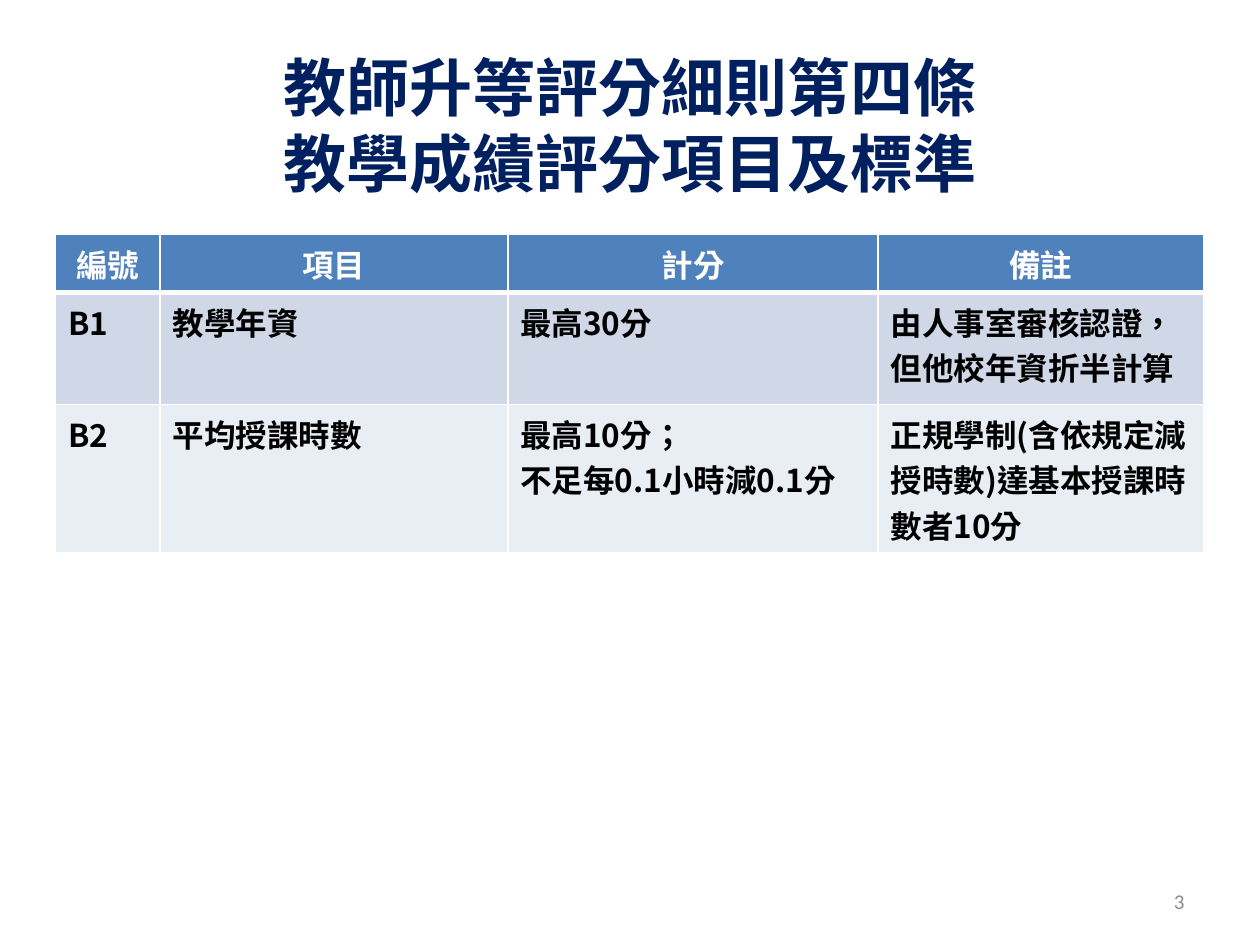
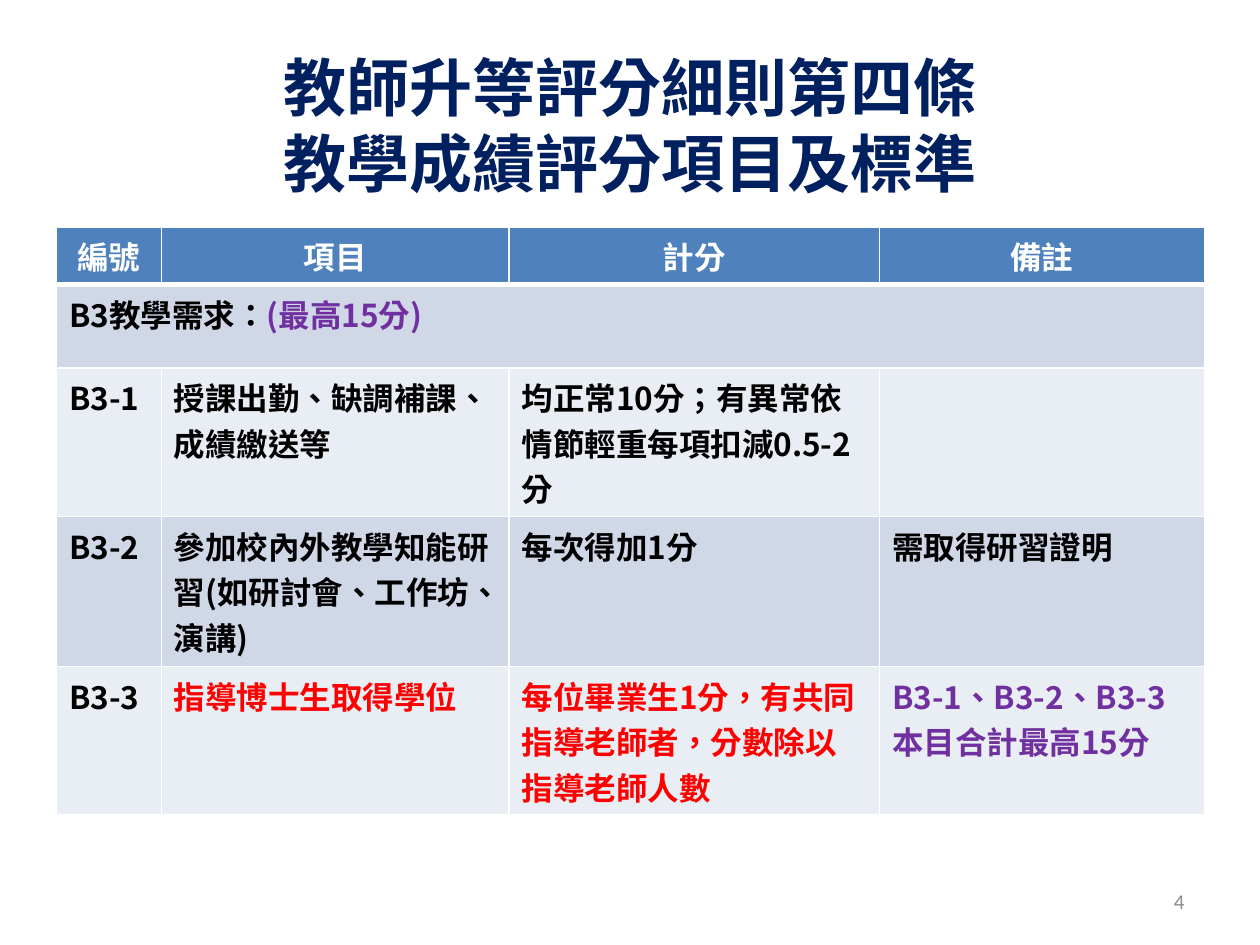
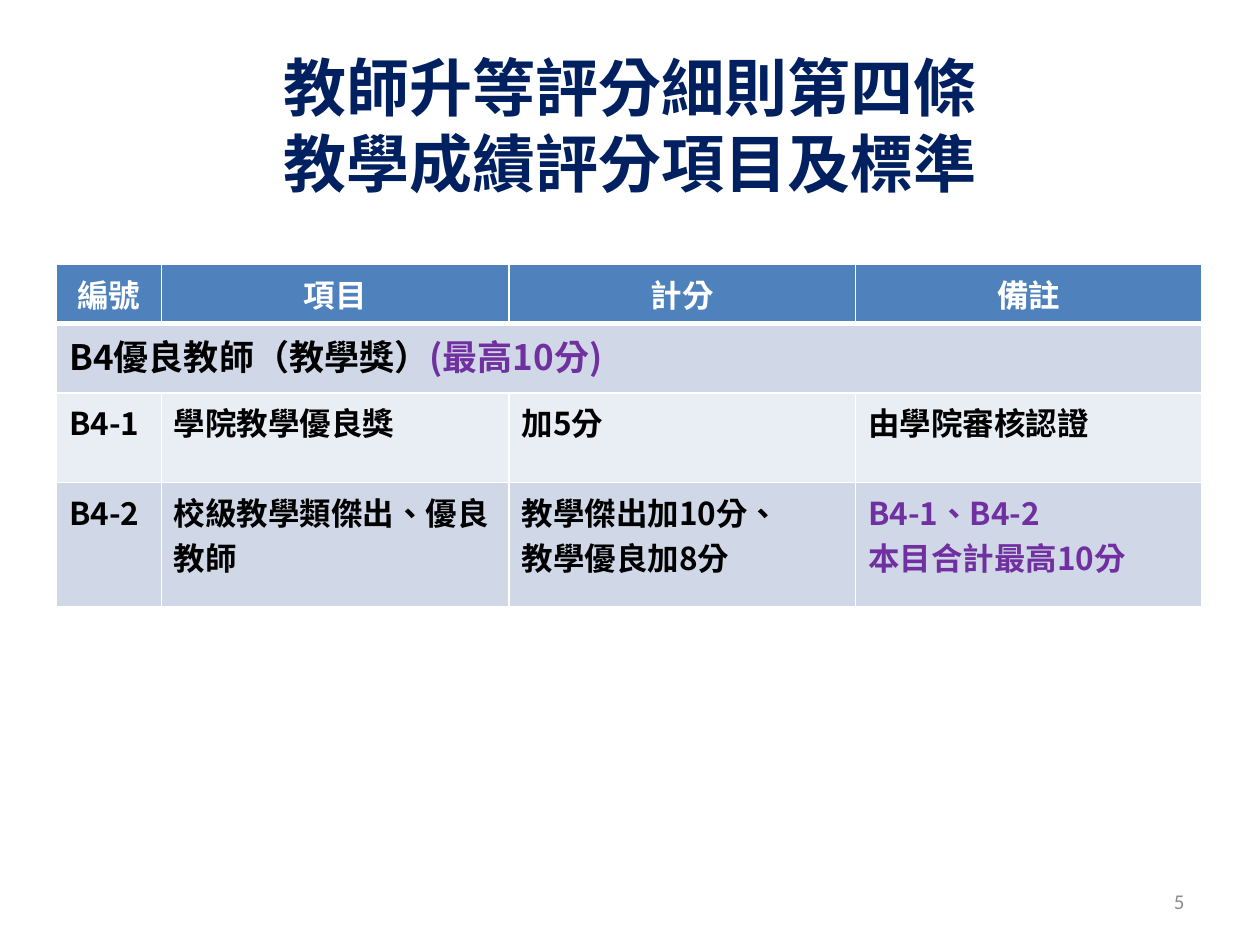
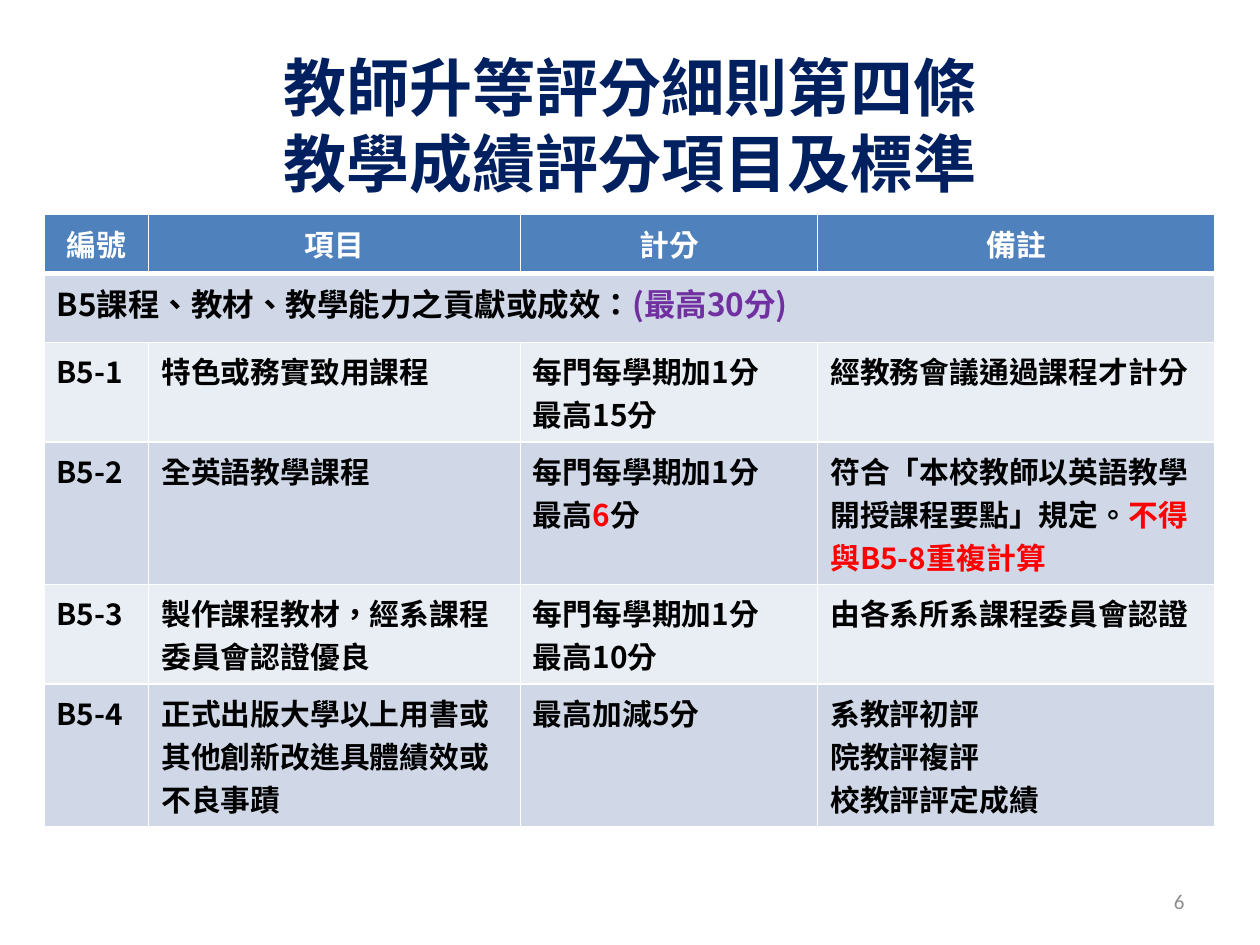
"""Build four slides of scoring tables for teacher promotion."""
import pptx
import pptx.dml.color
import pptx.enum.text
import pptx.oxml
import pptx.oxml.ns
import pptx.util

PX = 9144
RGB = pptx.dml.color.RGBColor
WHITE = RGB(0xFF, 0xFF, 0xFF)
BLACK = RGB(0x00, 0x00, 0x00)
NAVY = RGB(0x00, 0x20, 0x60)
BLUE = RGB(0x4F, 0x81, 0xBD)
DARK = RGB(0xD0, 0xD8, 0xE8)
LIGHT = RGB(0xE9, 0xED, 0xF4)
GREY = RGB(0x8C, 0x8C, 0x8C)
RED = RGB(0xFF, 0x00, 0x00)
PURPLE = RGB(0x70, 0x30, 0xA0)
FACE = "Noto Sans CJK SC"
TITLE = "教師升等評分細則第四條\v教學成績評分項目及標準"
HEAD = ["編號", "項目", "計分", "備註"]
FIRST = 3
ALIGN = pptx.enum.text.PP_ALIGN
MIDDLE = pptx.enum.text.MSO_ANCHOR.MIDDLE
qn = pptx.oxml.ns.qn


def style(run, size, color, latin, asian, bold=True):
    """Format one run, with a face for Latin and one for Chinese text."""
    font = run.font
    font.size = pptx.util.Pt(size)
    font.bold = bold
    font.name = latin
    font.color.rgb = color
    props = run._r.get_or_add_rPr()
    props.set("lang", "zh-TW")
    east = pptx.oxml.parse_xml(f'<a:ea {pptx.oxml.ns.nsdecls("a")} typeface="{asian}"/>')
    props.find(qn("a:latin")).addnext(east)


def edge(cell, top, base):
    """Draw white borders round a cell, given top and base widths in points."""
    props = cell._tc.get_or_add_tcPr()
    for spot, (side, width) in enumerate([("L", 1), ("R", 1), ("T", top), ("B", base)]):
        line = pptx.oxml.parse_xml(
            f'<a:ln{side} {pptx.oxml.ns.nsdecls("a")} w="{pptx.util.Pt(width)}">'
            f'<a:solidFill><a:srgbClr val="{WHITE}"/></a:solidFill></a:ln{side}>')
        props.insert(spot, line)


PAGES = [
    dict(left=44, top=186, size=18, band=18, cols=[83, 276, 294, 258], rows=[46, 89, 118], body=[
        ["B1", "教學年資", "最高30分", "由人事室審核認證，但他校年資折半計算"],
        ["B2", "平均授課時數", "最高10分；\n不足每0.1小時減0.1分",
         "正規學制(含依規定減授時數)達基本授課時數者10分"],
    ]),
    dict(left=45, top=180, size=18, band=18, cols=[83, 276, 294, 258],
         rows=[46, 66, 118, 119, 118], body=[
        [[("B3教學需求：", BLACK), ("(最高15分)", PURPLE)]],
        ["B3-1", "授課出勤、缺調補課、成績繳送等",
         "均正常10分；有異常依情節輕重每項扣減0.5-2分", ""],
        ["B3-2", "參加校內外教學知能研習(如研討會、工作坊、演講)", "每次得加1分", "需取得研習證明"],
        ["B3-3", [("指導博士生取得學位", RED)],
         [("每位畢業生1分，有共同指導老師者，分數除以指導老師人數", RED)],
         [("B3-1、B3-2、B3-3\n本目合計最高15分", PURPLE)]],
    ]),
    dict(left=45, top=210, size=18, band=20, cols=[83, 276, 275, 275],
         rows=[47, 55, 71, 99], body=[
        [[("B4優良教師（教學獎）", BLACK), ("(最高10分)", PURPLE)]],
        ["B4-1", "學院教學優良獎", "加5分", "由學院審核認證"],
        ["B4-2", "校級教學類傑出、優良教師", "教學傑出加10分、\n教學優良加8分",
         [("B4-1、B4-2\n本目合計最高10分", PURPLE)]],
    ]),
    dict(left=35, top=170, size=17, band=18, cols=[83, 295, 236, 315],
         rows=[47, 55, 79, 113, 79, 113], body=[
        [[("B5課程、教材、教學能力之貢獻或成效：", BLACK), ("(最高30分)", PURPLE)]],
        ["B5-1", "特色或務實致用課程", "每門每學期加1分\n最高15分", "經教務會議通過課程才計分"],
        ["B5-2", "全英語教學課程",
         [("每門每學期加1分\n最高", BLACK), ("6", RED), ("分", BLACK)],
         [("符合「本校教師以英語教學開授課程要點」規定。", BLACK), ("不得與B5-8重複計算", RED)]],
        ["B5-3", "製作課程教材，經系課程委員會認證優良", "每門每學期加1分\n最高10分",
         "由各系所系課程委員會認證"],
        ["B5-4", "正式出版大學以上用書或其他創新改進具體績效或不良事蹟", "最高加減5分",
         "系教評初評\n院教評複評\n校教評評定成績"],
    ]),
]

deck = pptx.Presentation()
deck.slide_width, deck.slide_height = 1000 * PX, 750 * PX
deck.element.set("firstSlideNum", str(FIRST))

for number, page in enumerate(PAGES, FIRST):
    slide = deck.slides.add_slide(deck.slide_layouts[5])

    title = slide.shapes.title
    title.left, title.top, title.width, title.height = 50 * PX, 36 * PX, 900 * PX, 125 * PX
    frame = title.text_frame
    frame.text = TITLE
    frame.auto_size = pptx.enum.text.MSO_AUTO_SIZE.NONE
    frame.vertical_anchor = MIDDLE
    frame.paragraphs[0].alignment = ALIGN.CENTER
    for run in frame.paragraphs[0].runs:
        style(run, 36, NAVY, "Times New Roman", "Calibri")

    frame = slide.shapes.add_textbox(717 * PX, 695 * PX, 233 * PX, 40 * PX).text_frame
    frame.word_wrap = True
    frame.vertical_anchor = MIDDLE
    frame.text = str(number)
    frame.paragraphs[0].alignment = ALIGN.RIGHT
    run = frame.paragraphs[0].runs[0]
    style(run, 12, GREY, "Calibri", "Calibri", False)
    field = run._r
    field.tag = qn("a:fld")
    field.set("id", "{B6F15528-21DE-4FAA-801E-634DDDAF4B2B}")
    field.set("type", "slidenum")

    cols, rows = page["cols"], page["rows"]
    table = slide.shapes.add_table(
        len(rows), len(cols), page["left"] * PX, page["top"] * PX,
        sum(cols) * PX, sum(rows) * PX).table
    for col, width in zip(table.columns, cols):
        col.width = width * PX
    for row, height in zip(table.rows, rows):
        row.height = height * PX

    for y, items in enumerate([HEAD] + page["body"]):
        for x in range(len(cols)):
            cell = table.cell(y, x)
            cell.fill.solid()
            cell.fill.fore_color.rgb = BLUE if y == 0 else DARK if y % 2 else LIGHT
            edge(cell, 3 if y == 1 else 1, 3 if y == 0 else 1)
        whole = len(items) == 1
        if whole:
            table.cell(y, 0).merge(table.cell(y, len(cols) - 1))
        size = page["band"] if whole else page["size"]
        for x, item in enumerate(items):
            cell = table.cell(y, x)
            if y == 0:
                cell.vertical_anchor = MIDDLE
            parts = [(item, BLACK if y else WHITE)] if isinstance(item, str) else item
            para = cell.text_frame.paragraphs[0]
            for text, color in parts:
                for turn, line in enumerate(text.split("\n")):
                    if turn:
                        para = cell.text_frame.add_paragraph()
                    if line:
                        run = para.add_run()
                        run.text = line
                        style(run, size, color, FACE, FACE)
            if y == 0:
                para.alignment = ALIGN.CENTER

deck.save("out.pptx")
